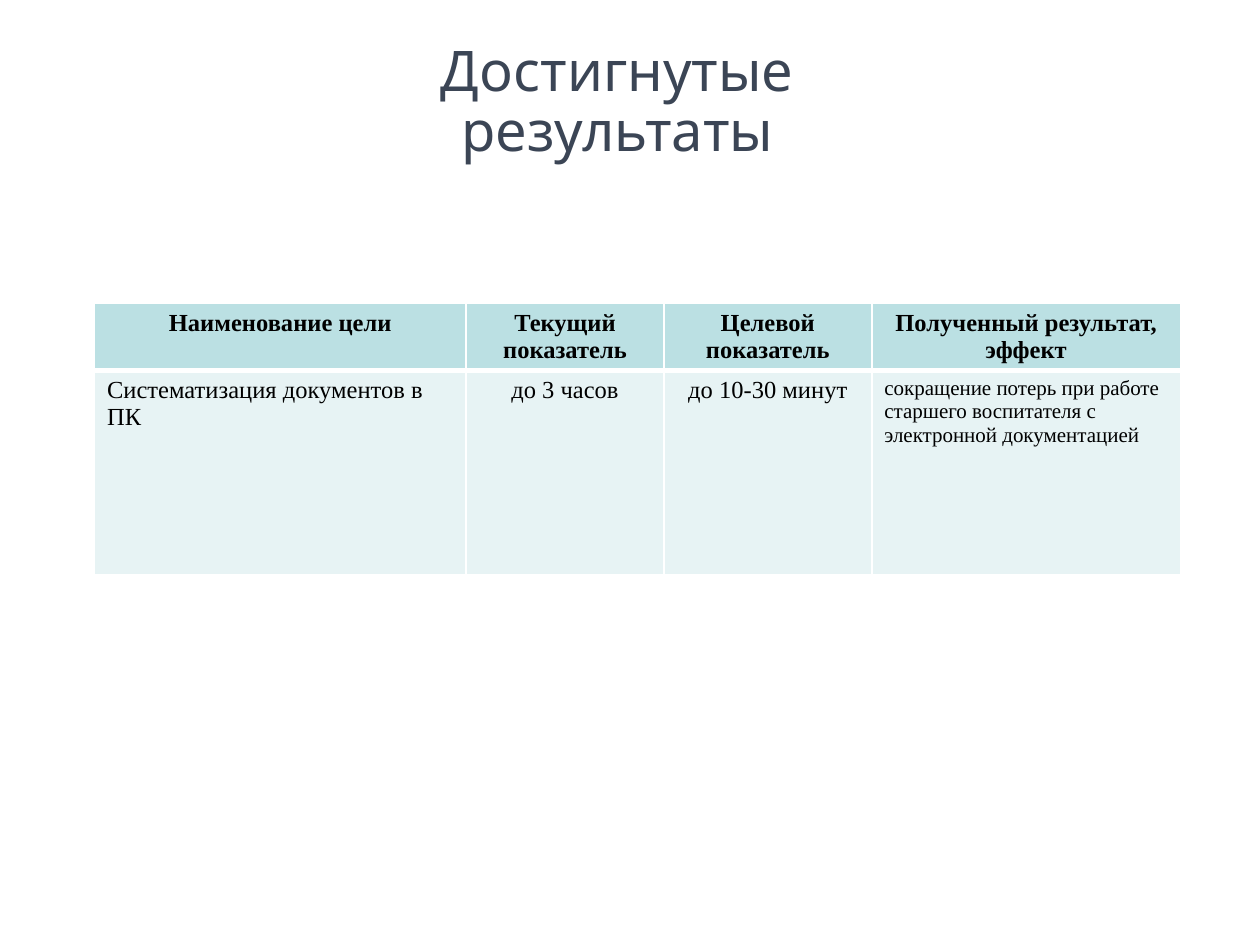
from dataclasses import dataclass

from lxml import etree
from pptx import Presentation
from pptx.dml.color import RGBColor
from pptx.enum.text import MSO_ANCHOR, PP_ALIGN
from pptx.oxml.ns import qn
from pptx.util import Inches, Pt

LEFT, CENTER = PP_ALIGN.LEFT, PP_ALIGN.CENTER
TOP = MSO_ANCHOR.TOP


@dataclass(frozen=True)
class Theme:
    title_font: str = "Quicksand"
    body_font: str = "Times New Roman"
    title_color: str = "3B4555"
    text_color: str = "000000"
    header_fill: str = "BBE0E3"
    body_fill: str = "E7F3F4"
    border: str = "FFFFFF"
    title_size: int = 32
    cell_size: int = 14
    note_size: int = 12
    thin: int = 1
    thick: int = 3


THEME = Theme()
TITLE = "Достигнутые результаты"
COLUMN_WIDTHS = [2.95, 1.57, 1.65, 2.45]
ROW_HEIGHTS = [0.53, 1.62]
HEADERS = [
    ["Наименование цели"],
    ["Текущий показатель"],
    ["Целевой", "показатель"],
    ["Полученный результат, эффект"],
]
RESULTS = [
    ("Систематизация документов в ПК", LEFT, THEME.cell_size),
    ("до 3 часов", CENTER, THEME.cell_size),
    ("до 10-30 минут", CENTER, THEME.cell_size),
    ("сокращение потерь при работе старшего воспитателя с "
     "электронной документацией", LEFT, THEME.note_size),
]


def add_run(p, text, font, size, color, bold=False):
    r = p.add_run()
    r.text = text
    r.font.name = font
    r.font.size = Pt(size)
    r.font.bold = bold
    r.font.color.rgb = RGBColor.from_string(color)


def set_borders(cell, top, bottom):
    tc_pr = cell._tc.get_or_add_tcPr()
    widths = {"a:lnL": THEME.thin, "a:lnR": THEME.thin, "a:lnT": top, "a:lnB": bottom}
    for i, (tag, width) in enumerate(widths.items()):
        ln = etree.Element(qn(tag), w=str(Pt(width)))
        fill = etree.SubElement(ln, qn("a:solidFill"))
        etree.SubElement(fill, qn("a:srgbClr"), val=THEME.border)
        tc_pr.insert(i, ln)


def fill_cell(cell, lines, align, size, fill, bold, top, bottom):
    cell.fill.solid()
    cell.fill.fore_color.rgb = RGBColor.from_string(fill)
    set_borders(cell, top, bottom)
    tf = cell.text_frame
    for i, line in enumerate(lines):
        p = tf.add_paragraph() if i else tf.paragraphs[0]
        p.alignment = align
        add_run(p, line, THEME.body_font, size, THEME.text_color, bold)


def add_title(slide, left, top, width, height):
    sp = slide.shapes.title
    sp.left, sp.top, sp.width, sp.height = left, top, width, height
    tf = sp.text_frame
    tf.word_wrap = True
    tf.vertical_anchor = TOP
    p = tf.paragraphs[0]
    p.alignment = CENTER
    p.line_spacing = 0.9
    add_run(p, TITLE, THEME.title_font, THEME.title_size, THEME.title_color)


def add_results_table(slide, left, top, width, height):
    table = slide.shapes.add_table(
        len(ROW_HEIGHTS), len(COLUMN_WIDTHS), left, top, width, height
    ).table
    table.first_row = True
    table.horz_banding = False
    for column, share in zip(table.columns, COLUMN_WIDTHS):
        column.width = int(width * share / sum(COLUMN_WIDTHS))
    for row, share in zip(table.rows, ROW_HEIGHTS):
        row.height = int(height * share / sum(ROW_HEIGHTS))
    for col, lines in enumerate(HEADERS):
        fill_cell(table.cell(0, col), lines, CENTER, THEME.cell_size,
                  THEME.header_fill, True, THEME.thin, THEME.thick)
    for col, (text, align, size) in enumerate(RESULTS):
        fill_cell(table.cell(1, col), [text], align, size,
                  THEME.body_fill, False, THEME.thick, THEME.thin)


def main():
    prs = Presentation()
    prs.slide_width, prs.slide_height = Inches(10), Inches(7.5)
    slide = prs.slides.add_slide(prs.slide_layouts[5])
    add_title(slide, Inches(2.25), Inches(0.29), Inches(5.3), Inches(0.64))
    add_results_table(slide, Inches(0.75), Inches(2.41), Inches(8.62), Inches(2.15))
    prs.save("out.pptx")


if __name__ == "__main__":
    main()
